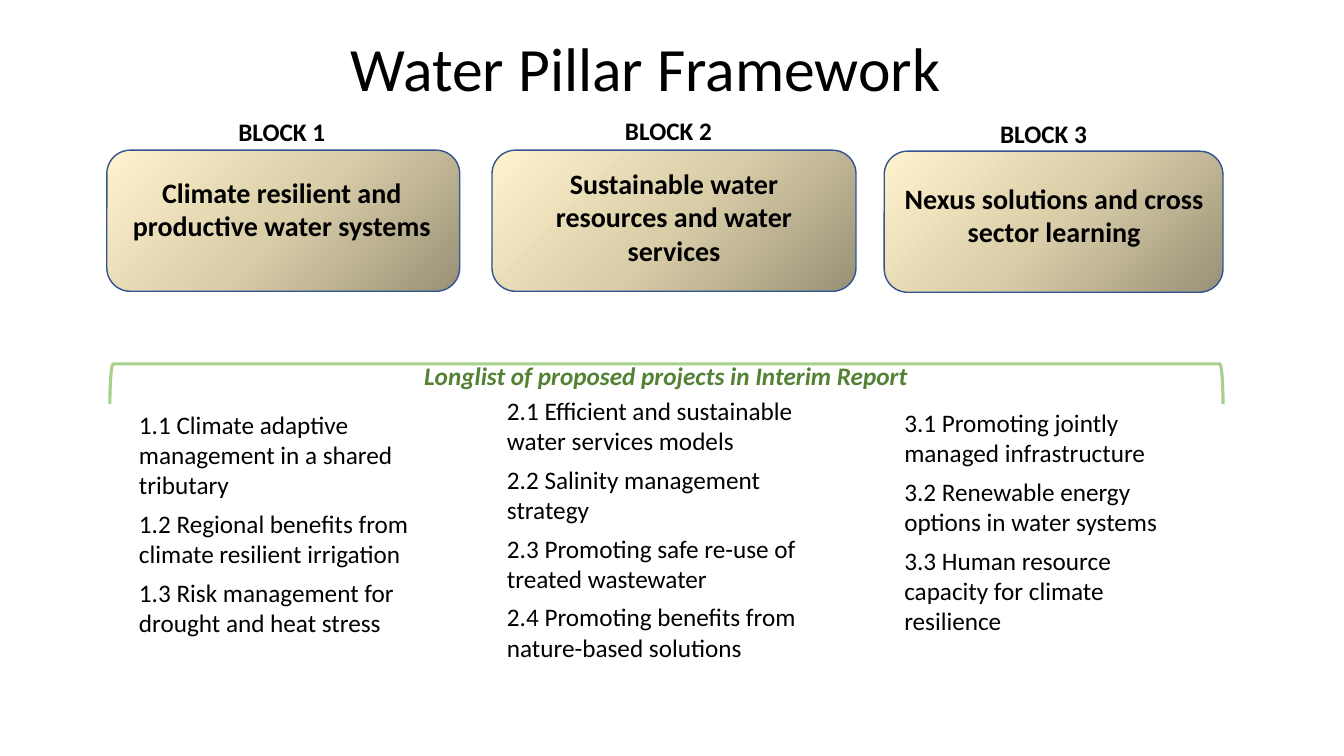
from copy import deepcopy

from pptx import Presentation
from pptx.dml.color import RGBColor as Color
from pptx.enum.shapes import MSO_SHAPE as Preset
from pptx.enum.text import MSO_ANCHOR as Anchor, PP_ALIGN as Align
from pptx.util import Inches, Pt

COLOURS = {
    "text": "000000",
    "heading": "548235",
    "bracket": "A9D18E",
    "outline": "325491",
    "dark": "999177",
    "middle": "DACEA9",
    "light": "FFF2CC",
}

# Each block: label, title, projects, each text with its box (left, top, width, height)
BLOCKS = [
    {
        "card": (1.06, 1.49, 3.5, 1.4),
        "label": ("BLOCK 1", (1.58, 1.1, 2.43, 0.48)),
        "title": ("Climate resilient and productive water systems", (1.09, 1.69, 3.41, 0.77)),
        "projects": ([
            "1.1 Climate adaptive management in a shared tributary",
            "1.2 Regional benefits from climate resilient irrigation",
            "1.3 Risk management for drought and heat stress",
        ], (1.28, 4.01, 3.32, 2.74)),
    },
    {
        "card": (4.88, 1.49, 3.61, 1.4),
        "label": ("BLOCK 2", (5.5, 1.09, 2.26, 0.48)),
        "title": ("Sustainable water resources and water services", (5.02, 1.6, 3.33, 1.11)),
        "projects": ([
            "2.1 Efficient and sustainable water services models",
            "2.2 Salinity management strategy",
            "2.3 Promoting safe re-use of treated wastewater",
            "2.4 Promoting benefits from nature-based solutions",
        ], (4.93, 3.87, 3.2, 2.78)),
    },
    {
        "card": (8.77, 1.5, 3.36, 1.4),
        "label": ("BLOCK 3", (9.22, 1.12, 2.26, 0.48)),
        "title": ("Nexus solutions and cross sector learning", (8.87, 1.75, 3.17, 0.91)),
        "projects": ([
            "3.1 Promoting jointly managed infrastructure",
            "3.2 Renewable energy options in water systems",
            "3.3 Human resource capacity for climate resilience",
        ], (8.87, 3.99, 3.01, 2.39)),
    },
]


class FrameworkSlide:
    """Holds the style and the current slide."""

    font_name = "Calibri"

    def __init__(self, slide):
        self.slide = slide

    def colour(self, name):
        return Color.from_string(COLOURS[name])

    def text(self, lines, box, size=18, colour="text", anchor=Anchor.TOP,
             paragraph_format=None, **font_format):
        shape = self.slide.shapes.add_textbox(*map(Inches, box))
        frame = shape.text_frame
        frame.word_wrap = True
        frame.vertical_anchor = anchor
        frame.text = "\n".join(lines)
        font_values = {"name": self.font_name, "size": Pt(size), **font_format}
        for paragraph in frame.paragraphs:
            for key, value in (paragraph_format or {}).items():
                setattr(paragraph, key, value)
            font = paragraph.runs[0].font
            for key, value in font_values.items():
                setattr(font, key, value)
            font.color.rgb = self.colour(colour)

    def outlined(self, preset, box, line_colour, line_width):
        shape = self.slide.shapes.add_shape(preset, *map(Inches, box))
        shape.shadow.inherit = False
        shape.line.color.rgb = self.colour(line_colour)
        shape.line.width = Pt(line_width)
        return shape

    def card(self, box):
        fill = self.outlined(Preset.ROUNDED_RECTANGLE, box, "outline", 1).fill
        fill.gradient()
        fill.gradient_angle = 135
        # The default gradient has two stops; a third goes between them
        stop_list = fill._fill._gradFill.gsLst
        stop_list.insert(1, deepcopy(stop_list[0]))
        for index, name in enumerate(("dark", "middle", "light")):
            stop = fill.gradient_stops[index]
            stop.position = index / 2
            stop.color.rgb = self.colour(name)

    def bracket(self, box):
        shape = self.outlined(Preset.LEFT_BRACKET, box, "bracket", 2.25)
        shape.fill.background()
        shape.rotation = 90


def main():
    presentation = Presentation()
    presentation.slide_width = Inches(13.33)
    presentation.slide_height = Inches(7.5)
    page = FrameworkSlide(presentation.slides.add_slide(presentation.slide_layouts[6]))
    centred = {"alignment": Align.CENTER}
    spaced = {"space_after": Pt(6)}

    # Slide title
    page.text(["Water Pillar Framework"], (3.38, 0.21, 6.21, 1), size=44,
              anchor=Anchor.MIDDLE, paragraph_format={"line_spacing": 0.9})

    # Blocks and their projects
    for block in BLOCKS:
        page.card(block["card"])
        for part, size in (("title", 20), ("label", 18)):
            wording, box = block[part]
            page.text([wording], box, size=size, bold=True, paragraph_format=centred)
        projects, box = block["projects"]
        page.text(projects, box, paragraph_format=spaced)

    # Longlist heading under its bracket
    page.text(["Longlist of proposed projects in Interim Report"], (3.5, 3.53, 6.21, 0.4),
              colour="heading", bold=True, italic=True,
              paragraph_format={**centred, **spaced})
    page.bracket((6.41, -1.71, 0.4, 11.04))

    presentation.save("out.pptx")


if __name__ == "__main__":
    main()
